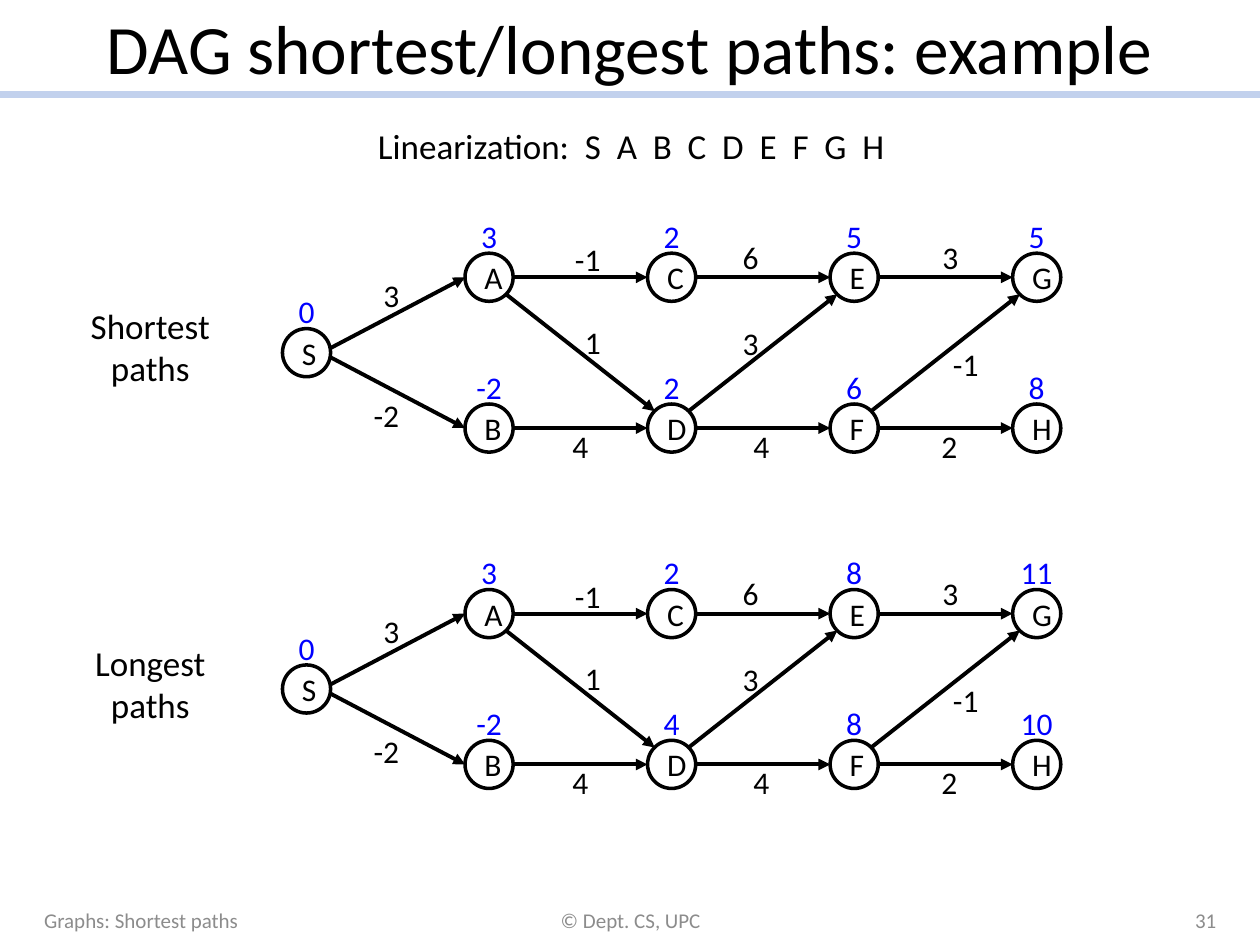
from lxml.etree import SubElement
from pptx import Presentation
from pptx.dml.color import RGBColor
from pptx.enum.shapes import MSO_CONNECTOR as Connector, MSO_SHAPE as Shape
from pptx.enum.text import MSO_ANCHOR as Anchor, MSO_AUTO_SIZE as AutoSize, PP_ALIGN as Align
from pptx.oxml.ns import qn
from pptx.util import Cm, Pt

COLORS = {"ink": "000000", "value": "0000FF", "footer": "8C8C8C", "rule": "C2D1ED", "paper": "FFFFFF"}
DIAMETER = 0.97
RADIUS = DIAMETER / 2
CORNER = 0.34
LEFT, TOP = 6.18, 5.59
COLUMN_GAP, ROW_GAP = 3.68, 1.52
GRAPH_GAP = 6.78

NODES = {
    "S": (0, 1),
    "A": (1, 0), "B": (1, 2),
    "C": (2, 0), "D": (2, 2),
    "E": (3, 0), "F": (3, 2),
    "G": (4, 0), "H": (4, 2),
}
EDGES = [
    ("S", "A", "3", 7.89, 5.44),
    ("S", "B", "-2", 7.79, 7.85),
    ("A", "C", "-1", 11.85, 4.72),
    ("A", "D", "1", 11.95, 6.38),
    ("B", "D", "4", 11.7, 8.48),
    ("C", "E", "6", 15.13, 4.67),
    ("D", "E", "3", 15.13, 6.4),
    ("D", "F", "4", 15.35, 8.48),
    ("E", "G", "3", 19.16, 4.67),
    ("F", "G", "-1", 19.47, 6.83),
    ("F", "H", "2", 19.14, 8.48),
]
GRAPHS = [
    ("Shortest\vpaths", 2.95, ["0", "3", "-2", "2", "2", "5", "6", "5", "8"]),
    ("Longest\vpaths", 2.77, ["0", "3", "-2", "2", "4", "8", "8", "11", "10"]),
]


class SlideBuilder:
    font = "Calibri"

    def __init__(self, slide):
        self.slide = slide

    def color(self, name):
        return RGBColor.from_string(COLORS[name])

    def set_text(self, shape, text, size, color, align):
        shape.text_frame.text = text
        for paragraph in shape.text_frame.paragraphs:
            paragraph.alignment = align
            for run in paragraph.runs:
                run.font.name = self.font
                run.font.size = Pt(size)
                run.font.color.rgb = self.color(color)

    def text(self, text, left, top, width, height, size, color="ink", align=Align.CENTER):
        shape = self.slide.shapes.add_textbox(Cm(left), Cm(top), Cm(width), Cm(height))
        self.set_text(shape, text, size, color, align)
        shape.text_frame.word_wrap = True
        shape.text_frame.vertical_anchor = Anchor.MIDDLE
        return shape

    def label(self, text, center, top, width, height=1.02, size=18, color="ink"):
        shape = self.text(text, center - width / 2, top, width, height, size, color)
        shape.text_frame.word_wrap = False
        shape.text_frame.auto_size = AutoSize.SHAPE_TO_FIT_TEXT
        shape.text_frame.vertical_anchor = Anchor.TOP

    def number(self, text, center, top, color="ink"):
        minus = text.count("-")
        self.label(text, center, top, 0.51 + 0.33 * (len(text) - minus) + 0.2 * minus, color=color)

    def line(self, begin, end, width, color="ink", arrow=False):
        points = [Cm(value) for value in (*begin, *end)]
        connector = self.slide.shapes.add_connector(Connector.STRAIGHT, *points)
        connector.line.width = Pt(width)
        connector.line.color.rgb = self.color(color)
        properties = connector.element.spPr
        if arrow:
            SubElement(properties.find(qn("a:ln")), qn("a:tailEnd"), type="triangle")
        SubElement(properties, qn("a:effectLst"))

    def node(self, name, x, y):
        shape = self.slide.shapes.add_shape(
            Shape.OVAL, Cm(x - RADIUS), Cm(y - RADIUS), Cm(DIAMETER), Cm(DIAMETER))
        shape.shadow.inherit = False
        if name == "S":
            shape.fill.solid()
            shape.fill.fore_color.rgb = self.color("paper")
        else:
            shape.fill.background()
        shape.line.color.rgb = self.color("ink")
        shape.line.width = Pt(2)
        shape.text_frame.vertical_anchor = Anchor.MIDDLE
        self.set_text(shape, name, 18, "ink", Align.CENTER)

    def edge(self, source, begin, end):
        (x1, y1), (x2, y2) = begin, end
        if y1 == y2:
            ends = (x1 + RADIUS, y1), (x2 - RADIUS, y2)
        else:
            slant = CORNER if y2 > y1 else -CORNER
            if source == "S":
                ends = (x1 - CORNER, y1 - slant), (x2 - RADIUS, y2)
            else:
                ends = (x1 + CORNER, y1 + slant), (x2 - CORNER, y2 - slant)
        self.line(*ends, 2.25, arrow=True)

    def graph(self, title, title_width, values, offset):
        centers = {name: (LEFT + COLUMN_GAP * column, TOP + ROW_GAP * row + offset)
                   for name, (column, row) in NODES.items()}
        for source, target, *_ in EDGES:
            self.edge(source, centers[source], centers[target])
        for (name, (x, y)), value in zip(centers.items(), values):
            self.node(name, x, y)
            self.number(value, x, y - 1.34, "value")
        for _, _, weight, x, top in EDGES:
            self.number(weight, x, top + offset)
        self.label(title, 3.03, 6.02 + offset, title_width, 1.96, 20)


def main():
    presentation = Presentation()
    presentation.slide_width, presentation.slide_height = Cm(25.4), Cm(19.05)
    builder = SlideBuilder(presentation.slides.add_slide(presentation.slide_layouts[6]))

    builder.line((0, 1.9), (25.4, 1.9), 4, "rule")
    builder.text("DAG shortest/longest paths: example", 1.27, 0, 22.86, 1.9, 39.6)
    builder.label("Linearization:  S  A  B  C  D  E  F  G  H", 12.73, 2.39, 10.82, 1.12, 20)
    for index, (title, width, values) in enumerate(GRAPHS):
        builder.graph(title, width, values, index * GRAPH_GAP)
    for text, left, width, align in [
        ("Graphs: Shortest paths", 0.64, 5.92, Align.LEFT),
        ("© Dept. CS, UPC", 8.69, 8.05, Align.CENTER),
        ("31", 18.85, 5.92, Align.RIGHT),
    ]:
        builder.text(text, left, 18.03, width, 1.02, 12, "footer", align)

    presentation.save("out.pptx")


if __name__ == "__main__":
    main()
